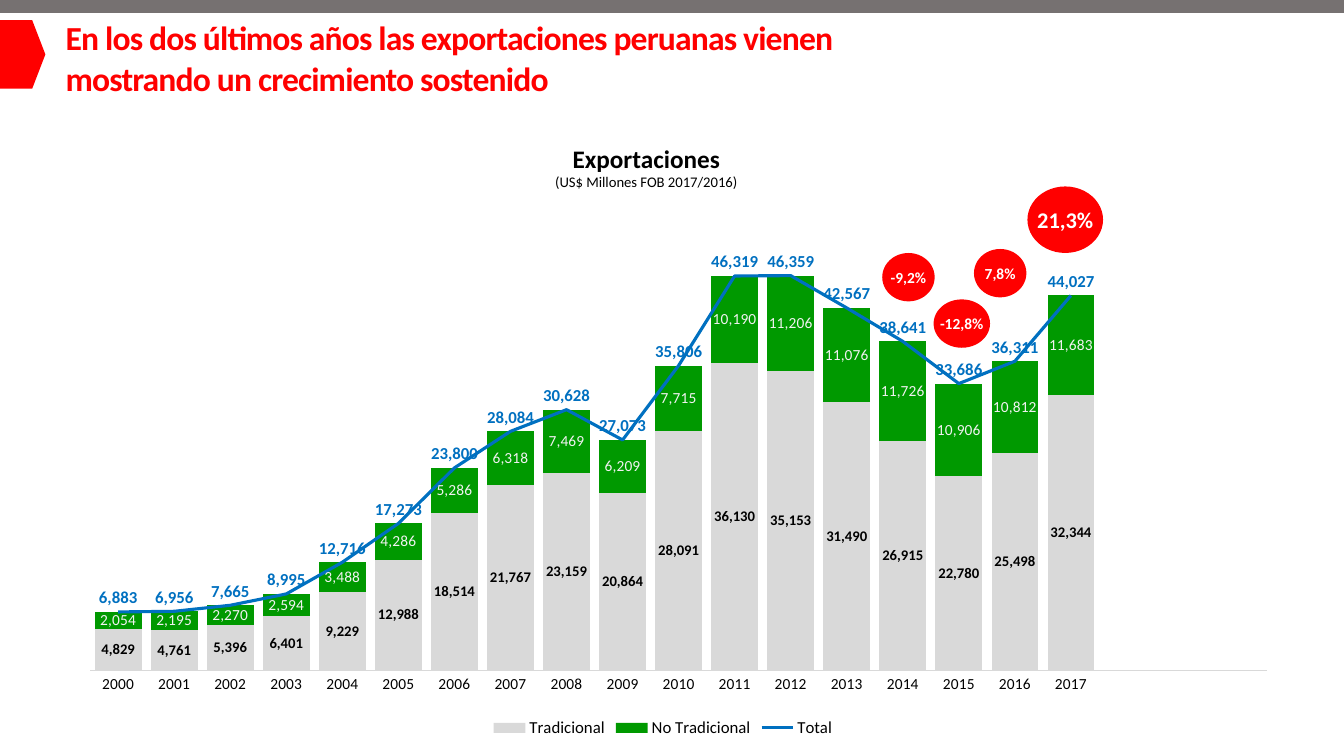
from dataclasses import dataclass

from pptx import Presentation
from pptx.chart.data import CategoryChartData
from pptx.dml.color import RGBColor
from pptx.enum.chart import XL_CHART_TYPE, XL_LABEL_POSITION, XL_LEGEND_POSITION, XL_MARKER_STYLE, XL_TICK_MARK
from pptx.enum.shapes import MSO_SHAPE
from pptx.enum.text import MSO_ANCHOR, MSO_AUTO_SIZE, PP_ALIGN
from pptx.oxml import parse_xml
from pptx.oxml.ns import nsdecls, qn
from pptx.util import Pt

PX = 9144  # EMU; 100 px to the inch


@dataclass(frozen=True)
class Theme:
    font: str = "Calibri"
    red: RGBColor = RGBColor(0xFF, 0x00, 0x00)
    band: RGBColor = RGBColor(0x76, 0x71, 0x71)
    gray: RGBColor = RGBColor(0xD9, 0xD9, 0xD9)
    green: RGBColor = RGBColor(0x00, 0x99, 0x00)
    blue: RGBColor = RGBColor(0x00, 0x70, 0xC0)
    black: RGBColor = RGBColor(0x00, 0x00, 0x00)
    white: RGBColor = RGBColor(0xFF, 0xFF, 0xFF)
    pale: RGBColor = RGBColor(0xF2, 0xF2, 0xF2)
    title: float = 24
    heading: float = 18
    highlight: float = 16
    total: float = 12
    body: float = 11
    small: float = 10.5


THEME = Theme()
NUMBER_FORMAT = "#,##0"

YEARS = [str(year) for year in range(2000, 2018)]
EMPTY_SLOTS = 3
TRADITIONAL = [4829, 4761, 5396, 6401, 9229, 12988, 18514, 21767, 23159,
               20864, 28091, 36130, 35153, 31490, 26915, 22780, 25498, 32344]
NON_TRADITIONAL = [2054, 2195, 2270, 2594, 3488, 4286, 5286, 6318, 7469,
                   6209, 7715, 10190, 11206, 11076, 11726, 10906, 10812, 11683]
TOTAL = [6883, 6956, 7665, 8995, 12716, 17273, 23800, 28084, 30628,
         27073, 35806, 46319, 46359, 42567, 38641, 33686, 36311, 44027]

# text, box, type size
GROWTH_BUBBLES = [
    ("21,3%", (1019, 185, 75, 66), THEME.highlight),
    ("7,8%", (966, 247, 52, 48), THEME.body),
    ("-12,8%", (926, 297, 56, 48), THEME.body),
    ("-9,2%", (875, 251, 52, 48), THEME.body),
]


def emu(box):
    return [length * PX for length in box]


def style_font(font, size, color, bold=False):
    font.name = THEME.font
    font.size = Pt(size)
    font.color.rgb = color
    font.bold = bold


def add_filled_shape(slide, kind, box, color):
    shape = slide.shapes.add_shape(kind, *emu(box))
    shape.shadow.inherit = False
    shape.fill.solid()
    shape.fill.fore_color.rgb = color
    shape.line.fill.background()
    return shape


def add_header(slide, box):
    """Top band, red pentagon and title, spread over the given box."""
    left, top, width, height = box
    band = add_filled_shape(slide, MSO_SHAPE.RECTANGLE, (left, top - 3, width, 15), THEME.band)
    band.line.color.rgb = THEME.band
    band.line.width = Pt(1)
    marker = add_filled_shape(slide, MSO_SHAPE.PENTAGON, (left, top + 20, 45, 68), THEME.red)
    marker.adjustments[0] = 0.29

    title = slide.shapes.title
    title.left, title.top, title.width, title.height = emu((left + 55, top + 12, 890, height - 12))
    frame = title.text_frame
    frame.text = "En los dos últimos años las exportaciones peruanas vienen mostrando un crecimiento sostenido"
    frame.word_wrap = True
    frame.auto_size = MSO_AUTO_SIZE.NONE
    frame.vertical_anchor = MSO_ANCHOR.TOP
    paragraph = frame.paragraphs[0]
    paragraph.alignment = PP_ALIGN.LEFT
    style_font(paragraph.font, THEME.title, THEME.red, bold=True)
    paragraph.runs[0].font._element.set("spc", "-60")


def add_chart_heading(slide, box):
    frame = slide.shapes.add_textbox(*emu(box)).text_frame
    frame.word_wrap = True
    frame.text = "Exportaciones\n(US$ Millones FOB 2017/2016)"
    for paragraph, size, bold in zip(frame.paragraphs, (THEME.heading, THEME.small), (True, False)):
        paragraph.alignment = PP_ALIGN.CENTER
        style_font(paragraph.font, size, THEME.black, bold)


def move_total_to_line(chart):
    """Turn the last column series into a line on the same axes."""
    bar_chart = chart.plots[0]._element
    total = bar_chart.findall(qn("c:ser"))[-1]
    for column_setting in total.findall(qn("c:invertIfNegative")):
        total.remove(column_setting)
    line_chart = parse_xml(
        f'<c:lineChart {nsdecls("c")}><c:grouping val="standard"/><c:varyColors val="0"/>'
        '<c:marker val="1"/></c:lineChart>')
    line_chart.insert(2, total)
    for axis in bar_chart.findall(qn("c:axId")):
        line_chart.append(parse_xml(f'<c:axId {nsdecls("c")} val="{axis.get("val")}"/>'))
    bar_chart.addnext(line_chart)


def set_plot_area(chart, x, y, width, height):
    plot_area = chart.plots[0]._element.getparent()
    for layout in plot_area.findall(qn("c:layout")):
        plot_area.remove(layout)
    plot_area.insert(0, parse_xml(
        f'<c:layout {nsdecls("c")}><c:manualLayout><c:layoutTarget val="inner"/>'
        '<c:xMode val="edge"/><c:yMode val="edge"/>'
        f'<c:x val="{x}"/><c:y val="{y}"/><c:w val="{width}"/><c:h val="{height}"/>'
        '</c:manualLayout></c:layout>'))


def label_series(series, size, color, bold):
    labels = series.data_labels
    labels.show_value = True
    labels.number_format = NUMBER_FORMAT
    labels.number_format_is_linked = False
    style_font(labels.font, size, color, bold)
    return labels


def style_axes(chart):
    years = chart.category_axis
    years.major_tick_mark = years.minor_tick_mark = XL_TICK_MARK.NONE
    years.has_major_gridlines = False
    years.format.line.color.rgb = THEME.gray
    years.format.line.width = Pt(0.75)
    style_font(years.tick_labels.font, THEME.body, THEME.black)
    values = chart.value_axis
    values.minimum_scale, values.maximum_scale = 0, 50000
    values.has_major_gridlines = False
    values.visible = False


def add_export_chart(slide, box):
    data = CategoryChartData(number_format=NUMBER_FORMAT)
    data.categories = YEARS + [""] * EMPTY_SLOTS
    for name, values in (("Tradicional", TRADITIONAL), ("No Tradicional", NON_TRADITIONAL), ("Total", TOTAL)):
        data.add_series(name, values + [None] * EMPTY_SLOTS)
    chart = slide.shapes.add_chart(XL_CHART_TYPE.COLUMN_STACKED, *emu(box), data).chart
    chart.has_title = False
    style_font(chart.font, THEME.small, THEME.black)
    move_total_to_line(chart)
    set_plot_area(chart, 0.027, 0.071, 0.972, 0.796)
    style_axes(chart)

    columns, line = chart.plots
    columns.gap_width, columns.overlap = 20, 100
    columns.vary_by_categories = False
    traditional, non_traditional = columns.series
    for series, color in ((traditional, THEME.gray), (non_traditional, THEME.green)):
        series.format.fill.solid()
        series.format.fill.fore_color.rgb = color
    label_series(traditional, THEME.small, THEME.black, bold=True)
    label_series(non_traditional, THEME.body, THEME.pale, bold=False)

    total = line.series[0]
    total.smooth = False
    total.marker.style = XL_MARKER_STYLE.NONE
    total.format.line.color.rgb = THEME.blue
    total.format.line.width = Pt(2.25)
    label_series(total, THEME.total, THEME.blue, bold=True).position = XL_LABEL_POSITION.ABOVE

    chart.has_legend = True
    chart.legend.position = XL_LEGEND_POSITION.BOTTOM
    chart.legend.include_in_layout = False
    style_font(chart.legend.font, THEME.total, THEME.black)


def add_growth_bubble(slide, text, box, size):
    frame = add_filled_shape(slide, MSO_SHAPE.OVAL, box, THEME.red).text_frame
    frame.margin_left = frame.margin_right = frame.margin_top = frame.margin_bottom = 0
    frame.word_wrap = False
    frame.vertical_anchor = MSO_ANCHOR.MIDDLE
    frame.text = text
    frame.paragraphs[0].alignment = PP_ALIGN.CENTER
    style_font(frame.paragraphs[0].font, size, THEME.white, bold=True)


def main():
    presentation = Presentation()
    presentation.slide_width, presentation.slide_height = emu((1333, 750))
    slide = presentation.slides.add_slide(presentation.slide_layouts[5])
    add_export_chart(slide, (57, 205, 1201, 531))
    add_chart_heading(slide, (0, 137, 1282, 59))
    for text, box, size in GROWTH_BUBBLES:
        add_growth_bubble(slide, text, box, size)
    add_header(slide, (0, 0, 1333, 103))
    presentation.save("out.pptx")


if __name__ == "__main__":
    main()
